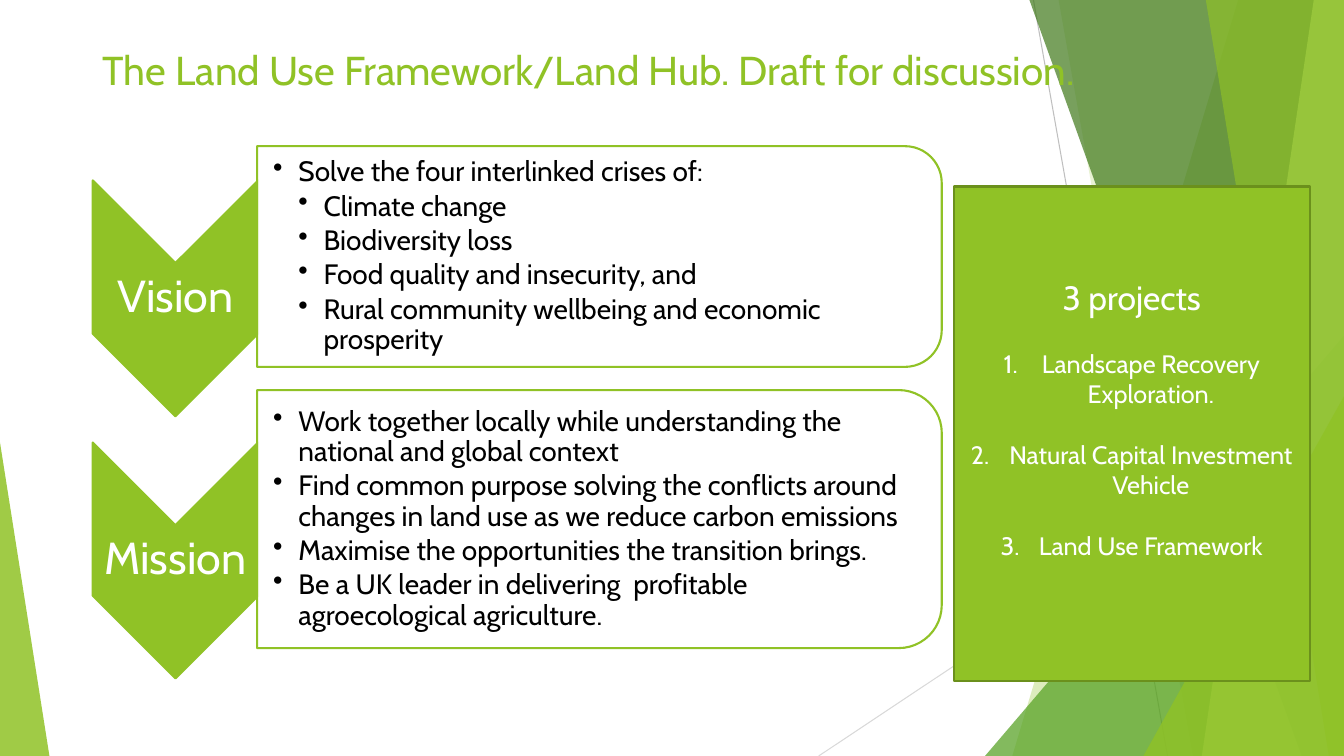
import pptx
import pptx.util
import pptx.dml.color
import pptx.enum.shapes
import pptx.enum.text
import pptx.oxml
import pptx.oxml.ns

# Content
TITLE = "The Land Use Framework/Land Hub. Draft for discussion."
# Each row: label, chevron top, body top, body height, (indent level, text) items
ROWS = [
    ("Vision", 1.79, 1.45, 2.19, [
        (1, "Solve the four interlinked crises of:"),
        (2, "Climate change"),
        (2, "Biodiversity loss"),
        (2, "Food quality and insecurity, and"),
        (2, "Rural community wellbeing and economic prosperity"),
    ]),
    ("Mission", 4.39, 3.87, 2.56, [
        (1, "Work together locally while understanding the national and global context"),
        (1, "Find common purpose solving the conflicts around changes in land use "
            "as we reduce carbon emissions"),
        (1, "Maximise the opportunities the transition brings."),
        (1, "Be a UK leader in delivering  profitable  agroecological agriculture."),
    ]),
]
PANEL_HEADING = "3 projects"
PROJECTS = ["Landscape Recovery Exploration.", "Natural Capital Investment Vehicle",
            "Land Use Framework"]

# Style and layout, in inches
FONT, GREEN, WHITE, BLACK = "Cabin", "90C226", "FFFFFF", "000000"
WIDTH, HEIGHT = 13.33, 7.5
CHEVRON_LEFT, CHEVRON_WIDTH, CHEVRON_HEIGHT = 0.92, 1.64, 2.34
BODY_LEFT, BODY_WIDTH = 2.55, 6.79
PANEL = (9.46, 1.85, 3.53, 4.91)

# Background: lines by end points, bands by top and bottom x of their left edge,
# triangles by left, top, width and apex position; all reach the slide's bottom
RAYS = [(10.25, 0, 11.58, HEIGHT, "BFBFBF"), (WIDTH, 4.03, 8.12, HEIGHT, "D9D9D9")]
FACETS = [
    ("band", (12.28, 10.04), GREEN, 30),
    ("band", (10.5, 11.83), GREEN, 20),
    ("triangle", (9.77, 3.33, 3.56, 1), "54A021", 72),
    ("band", (10.21, 12.91), "3F7819", 70),
    ("band", (13.03, 11.92), "C0E474", 70),
    ("band", (11.96, 13.18), GREEN, 65),
    ("triangle", (11.34, 3.93, 1.99, 1), GREEN, 80),
    ("triangle", (0, 4.39, 0.49, 0), GREEN, 85),
]

SHAPES = pptx.enum.shapes.MSO_SHAPE
ANCHOR = pptx.enum.text.MSO_ANCHOR
ALIGN = pptx.enum.text.PP_ALIGN


def inches(*values):
    return [pptx.util.Inches(value) for value in values]


def color(hex_code):
    return pptx.dml.color.RGBColor.from_string(hex_code)


def paint(shape, fill, alpha=100, line=None):
    shape.shadow.inherit = False
    shape.fill.solid()
    shape.fill.fore_color.rgb = color(fill)
    if alpha < 100:
        srgb = shape.fill._xPr.find(".//" + pptx.oxml.ns.qn("a:srgbClr"))
        pptx.oxml.ns.qn("a:alpha")
        element = pptx.oxml.parse_xml(
            f'<a:alpha {pptx.oxml.ns.nsdecls("a")} val="{alpha * 1000}"/>')
        srgb.append(element)
    if line:
        shape.line.color.rgb = color(line)
        shape.line.width = pptx.util.Pt(1.5)
    else:
        shape.line.fill.background()


def add_rotated(slide, preset, left, top, width, height):
    """Place a shape turned by 90 degrees so that it covers the given box."""
    shift = (width - height) / 2
    shape = slide.shapes.add_shape(
        preset, *inches(left + shift, top - shift, height, width))
    shape.rotation = 90
    return shape


def add_text_box(slide, box, anchor=ANCHOR.MIDDLE, insets=(0.02, 0.02, 0.02, 0.02)):
    return set_frame(slide.shapes.add_textbox(*inches(*box)), anchor, insets)


def set_frame(shape, anchor, insets):
    frame = shape.text_frame
    frame.word_wrap = True
    frame.vertical_anchor = anchor
    (frame.margin_left, frame.margin_top,
     frame.margin_right, frame.margin_bottom) = inches(*insets)
    return frame


def write(frame, text, size, ink, align=ALIGN.LEFT, line_spacing=1.0, before=0, after=0,
          indent=0, hanging=0, bullet=None):
    paragraph = frame.paragraphs[0]
    if paragraph.runs:
        paragraph = frame.add_paragraph()
    paragraph.alignment = align
    paragraph.line_spacing = line_spacing
    paragraph.space_before = pptx.util.Pt(before)
    paragraph.space_after = pptx.util.Pt(after)
    run = paragraph.add_run()
    run.text = text
    run.font.name = FONT
    run.font.size = pptx.util.Pt(size)
    run.font.color.rgb = color(ink)
    if bullet:
        properties = paragraph._p.get_or_add_pPr()
        properties.set("marL", str(pptx.util.Inches(indent)))
        properties.set("indent", str(-pptx.util.Inches(hanging)))
        properties.append(pptx.oxml.parse_xml(
            bullet.replace(" ", f' {pptx.oxml.ns.nsdecls("a")} ', 1)))


def draw_background(slide):
    for x1, y1, x2, y2, ink in RAYS:
        ray = slide.shapes.add_connector(
            pptx.enum.shapes.MSO_CONNECTOR.STRAIGHT, *inches(x1, y1, x2, y2))
        ray.line.color.rgb = color(ink)
        ray.line.width = pptx.util.Pt(0.75)
        ray._element.spPr.append(pptx.oxml.parse_xml(
            f'<a:effectLst {pptx.oxml.ns.nsdecls("a")}/>'))
    for kind, place, fill, alpha in FACETS:
        if kind == "band":
            top_x, bottom_x = place
            builder = slide.shapes.build_freeform(*inches(top_x, 0))
            builder.add_line_segments(
                [inches(WIDTH, 0), inches(WIDTH, HEIGHT), inches(bottom_x, HEIGHT)])
            facet = builder.convert_to_shape()
        else:
            left, top, width, apex = place
            facet = slide.shapes.add_shape(
                SHAPES.ISOSCELES_TRIANGLE, *inches(left, top, width, HEIGHT - top))
            facet.adjustments[0] = apex
        paint(facet, fill, alpha)


def draw_row(slide, label, chevron_top, body_top, body_height, items):
    chevron = add_rotated(slide, SHAPES.CHEVRON, CHEVRON_LEFT, chevron_top,
                          CHEVRON_WIDTH, CHEVRON_HEIGHT)
    paint(chevron, GREEN, line=GREEN)
    label_top = chevron_top + CHEVRON_WIDTH / 2
    frame = add_text_box(slide, (CHEVRON_LEFT, label_top, CHEVRON_WIDTH, 0.7))
    write(frame, label, 32, WHITE, align=ALIGN.CENTER, line_spacing=0.9)

    body = add_rotated(slide, SHAPES.ROUND_2_SAME_RECTANGLE, BODY_LEFT, body_top,
                       BODY_WIDTH, body_height)
    paint(body, WHITE, 90, GREEN)
    inner = body_height * 0.05
    frame = add_text_box(
        slide, (BODY_LEFT, body_top + inner, BODY_WIDTH - inner, body_height - 2 * inner),
        insets=(0.16, 0.01, 0.01, 0.01))
    for level, text in items:
        write(frame, text, 20, BLACK, line_spacing=0.9, after=3,
              indent=0.25 * level, hanging=0.25, bullet='<a:buChar char="•"/>')


def draw_panel(slide):
    panel = slide.shapes.add_shape(SHAPES.RECTANGLE, *inches(*PANEL))
    paint(panel, GREEN, line="6B901C")
    frame = set_frame(panel, ANCHOR.MIDDLE, (0.1, 0.05, 0.1, 0.35))
    write(frame, PANEL_HEADING, 24, WHITE, align=ALIGN.CENTER)
    for project in PROJECTS:
        write(frame, project, 18, WHITE, align=ALIGN.CENTER, before=22, indent=0.38,
              hanging=0.38, bullet='<a:buAutoNum type="arabicPeriod"/>')


def main():
    presentation = pptx.Presentation()
    presentation.slide_width, presentation.slide_height = inches(WIDTH, HEIGHT)
    slide = presentation.slides.add_slide(presentation.slide_layouts[6])
    draw_background(slide)
    title = add_text_box(slide, (0.92, 0.4, 11.5, 0.85), ANCHOR.TOP, (0.1, 0.05, 0.1, 0.05))
    write(title, TITLE, 28.8, GREEN)
    for row in ROWS:
        draw_row(slide, *row)
    draw_panel(slide)
    presentation.save("out.pptx")


if __name__ == "__main__":
    main()
